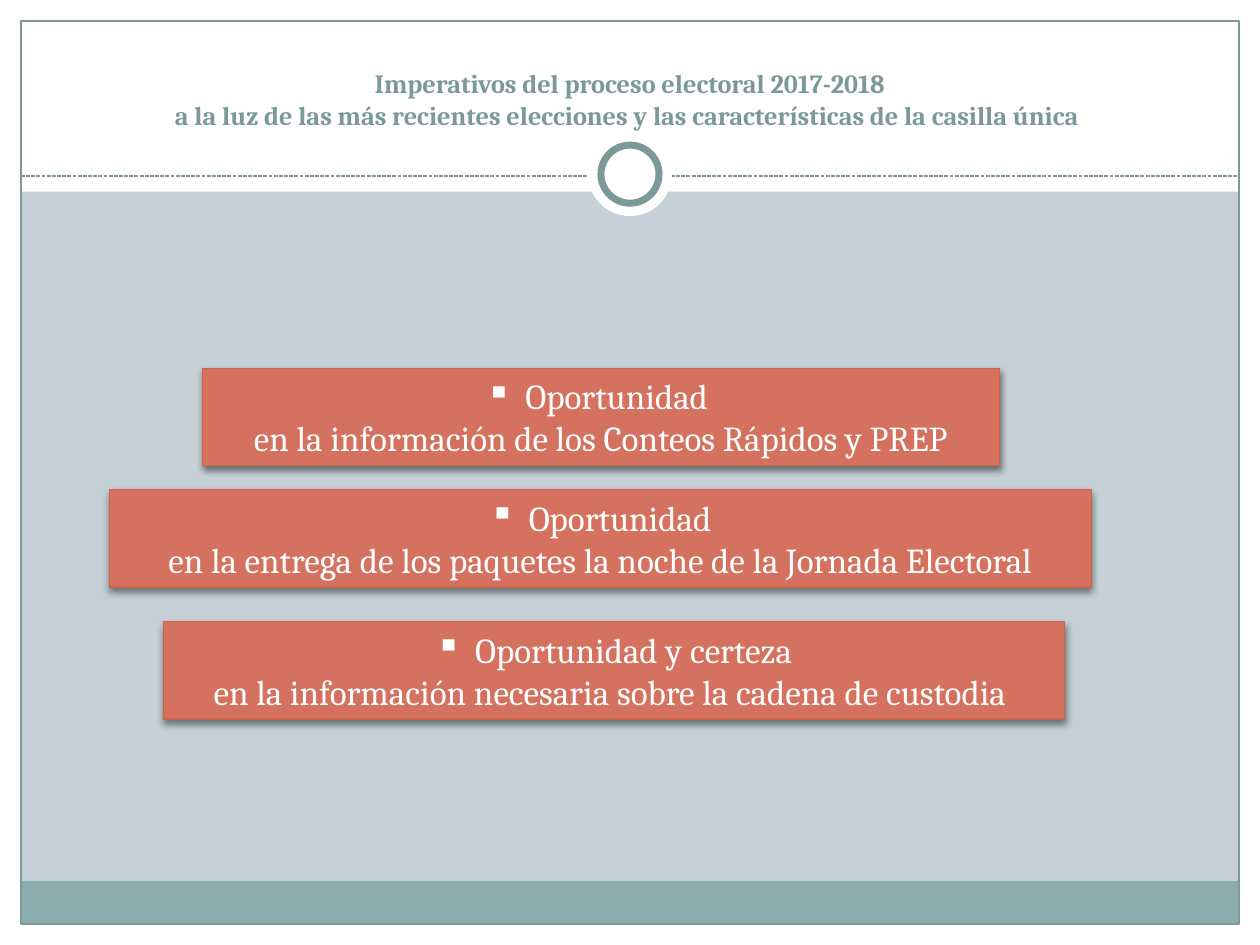
"""Build the slide on the imperatives of the 2017-2018 electoral process."""
import pptx
import pptx.dml.color
import pptx.enum.dml
import pptx.enum.shapes
import pptx.enum.text
import pptx.oxml
import pptx.oxml.ns
import pptx.util

Pt = pptx.util.Pt
RGBColor = pptx.dml.color.RGBColor
MSO_SHAPE = pptx.enum.shapes.MSO_SHAPE
PP_ALIGN = pptx.enum.text.PP_ALIGN
MSO_AUTO_SIZE = pptx.enum.text.MSO_AUTO_SIZE

WHITE = RGBColor(0xFF, 0xFF, 0xFF)
BACKGROUND = RGBColor(0xC5, 0xD1, 0xD7)
TEAL = RGBColor(0x8C, 0xAD, 0xAE)
DARK_TEAL = RGBColor(0x7C, 0x99, 0x9A)
CORAL = RGBColor(0xD4, 0x72, 0x5F)
DARK_CORAL = RGBColor(0xD1, 0x63, 0x49)
FONT = "Cambria"
NAMESPACE = pptx.oxml.ns.nsdecls("a")
SHADOW = (
    f'<a:outerShdw {NAMESPACE} blurRad="{Pt(4)}" dist="{Pt(2)}" dir="5400000" rotWithShape="0">'
    '<a:srgbClr val="000000"><a:alpha val="45000"/></a:srgbClr></a:outerShdw>'
)
BULLET = f'<a:buChar {NAMESPACE} char="▪"/>'


def add_shape(kind, box, fill=None, line=None, line_width=0.75):
    shape = slide.shapes.add_shape(kind, *map(Pt, box))
    shape.shadow.inherit = False
    if fill is None:
        shape.fill.background()
    else:
        shape.fill.solid()
        shape.fill.fore_color.rgb = fill
    if line is None:
        shape.line.fill.background()
    else:
        shape.line.color.rgb = line
        shape.line.width = Pt(line_width)
    return shape


def format_paragraph(paragraph, size, color, bold=False):
    paragraph.alignment = PP_ALIGN.CENTER
    for run in paragraph.runs:
        run.font.name = FONT
        run.font.size = Pt(size)
        run.font.bold = bold
        run.font.color.rgb = color


presentation = pptx.Presentation()
presentation.slide_width = Pt(720)
presentation.slide_height = Pt(540)
slide = presentation.slides.add_slide(presentation.slide_layouts[6])
slide.background.fill.solid()
slide.background.fill.fore_color.rgb = BACKGROUND

bands = [
    ((0, 528, 720, 12), WHITE),
    ((0, 0, 720, 109.5), WHITE),
    ((0, 0, 12, 540), WHITE),
    ((708, 0, 12, 540), WHITE),
    ((12, 503.5, 696, 24.5), TEAL),
]
for box, color in bands:
    add_shape(MSO_SHAPE.RECTANGLE, box, color)
add_shape(MSO_SHAPE.RECTANGLE, (12, 12, 696, 516), line=DARK_TEAL)

divider = slide.shapes.add_connector(
    pptx.enum.shapes.MSO_CONNECTOR.STRAIGHT, Pt(12), Pt(100.6), Pt(708), Pt(100.6)
)
divider.line.color.rgb = DARK_TEAL
divider.line.width = Pt(0.75)
divider.line.dash_style = pptx.enum.dml.MSO_LINE.SQUARE_DOT
divider._element.spPr.append(pptx.oxml.parse_xml(f"<a:effectLst {NAMESPACE}/>"))

add_shape(MSO_SHAPE.OVAL, (336, 75.5, 48, 48), WHITE)
add_shape(MSO_SHAPE.OVAL, (343.4, 82.9, 33.2, 33.2), WHITE, DARK_TEAL, 4)

imperatives = [
    (115.7, 210.4, 455.4, "Oportunidad ", "en la información de los Conteos Rápidos y PREP"),
    (62.6, 279.8, 561, "Oportunidad", "en la entrega de los paquetes la noche de la Jornada Electoral"),
    (93.4, 355.2, 515, "Oportunidad y certeza", "en la información necesaria sobre la cadena de custodia "),
]
for left, top, width, heading, detail in imperatives:
    shape = add_shape(MSO_SHAPE.RECTANGLE, (left, top, width, 55.7), CORAL, DARK_CORAL)
    effects = shape._element.spPr.find(pptx.oxml.ns.qn("a:effectLst"))
    effects.append(pptx.oxml.parse_xml(SHADOW))
    text_frame = shape.text_frame
    text_frame.word_wrap = False
    text_frame.auto_size = MSO_AUTO_SIZE.SHAPE_TO_FIT_TEXT
    text_frame.text = f"{heading}\n{detail}"
    for paragraph in text_frame.paragraphs:
        format_paragraph(paragraph, 20, WHITE)
    properties = text_frame.paragraphs[0]._p.get_or_add_pPr()
    properties.set("marL", str(Pt(22.5)))
    properties.set("indent", str(-Pt(22.5)))
    properties.append(pptx.oxml.parse_xml(BULLET))

title = slide.shapes.add_textbox(Pt(24), Pt(18), Pt(672), Pt(60))
title.text_frame.word_wrap = True
title.text_frame.vertical_anchor = pptx.enum.text.MSO_ANCHOR.BOTTOM
paragraph = title.text_frame.paragraphs[0]
paragraph.text = (
    "Imperativos del proceso electoral 2017-2018\n"
    "a la luz de las más recientes elecciones y las características de la casilla única "
)
format_paragraph(paragraph, 15, DARK_TEAL, bold=True)

presentation.save("out.pptx")
